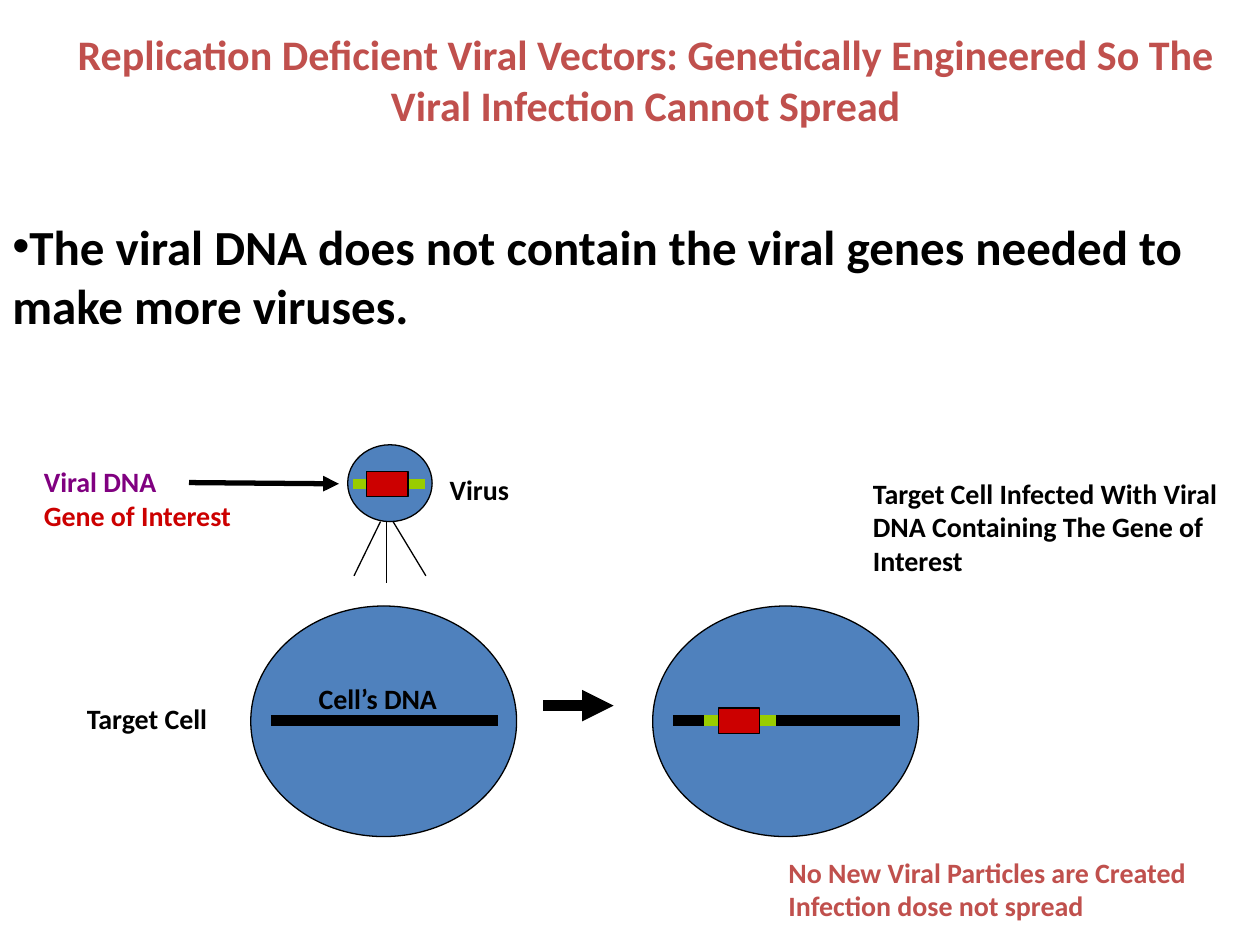
from lxml.etree import SubElement
from pptx import Presentation
from pptx.dml.color import RGBColor
from pptx.enum.shapes import MSO_CONNECTOR, MSO_SHAPE
from pptx.enum.text import MSO_AUTO_SIZE, PP_ALIGN
from pptx.oxml.ns import qn
from pptx.util import Inches, Pt

BLACK = "000000"
BLUE = "4F81BD"
BRICK = "C0504D"
RED = "CC0000"
GREEN = "99CC00"
PURPLE = "800080"


def colour(value):
    return RGBColor.from_string(value)


class SlideBuilder:
    font_name = "Calibri"
    label_size = 16
    outline_width = 0.75
    strand_width = 6

    def __init__(self, page):
        self.page = page

    def text(self, left, top, width, height, lines, size=label_size,
             align=PP_ALIGN.LEFT, wrap=False, bullet=None):
        box = self.page.shapes.add_textbox(
            Inches(left), Inches(top), Inches(width), Inches(height))
        frame = box.text_frame
        frame.word_wrap = wrap
        frame.auto_size = MSO_AUTO_SIZE.SHAPE_TO_FIT_TEXT
        for index, (words, ink) in enumerate(lines):
            para = frame.add_paragraph() if index else frame.paragraphs[0]
            para.text = words
            para.alignment = align
            if bullet:
                properties = para._p.get_or_add_pPr()
                SubElement(properties, qn("a:buFont"), typeface="Arial")
                SubElement(properties, qn("a:buChar"), char=bullet)
            para.font.name = self.font_name
            para.font.size = Pt(size)
            para.font.bold = True
            para.font.color.rgb = colour(ink)

    def shape(self, kind, left, top, width, height, fill):
        shape = self.page.shapes.add_shape(
            kind, Inches(left), Inches(top), Inches(width), Inches(height))
        shape.shadow.inherit = False
        shape.fill.solid()
        shape.fill.fore_color.rgb = colour(fill)
        shape.line.color.rgb = colour(BLACK)
        shape.line.width = Pt(self.outline_width)

    def line(self, start, end, ink=BLACK, width=outline_width, arrow=False):
        line = self.page.shapes.add_connector(
            MSO_CONNECTOR.STRAIGHT, *(Inches(value) for value in start + end))
        line.line.color.rgb = colour(ink)
        line.line.width = Pt(width)
        if arrow:
            SubElement(line.line._get_or_add_ln(), qn("a:tailEnd"), type="triangle")
        SubElement(line._element.spPr, qn("a:effectLst"))

    def strand(self, left, y, length, ink=BLACK, arrow=False):
        self.line((left, y), (left + length, y), ink, self.strand_width, arrow)

    def cell(self, left):
        self.shape(MSO_SHAPE.OVAL, left, 4.81, 2.11, 1.83, BLUE)
        self.strand(left + 0.16, 5.72, 1.8)

    def viral_dna(self, left, y):
        self.strand(left, y, 0.57, GREEN)
        self.shape(MSO_SHAPE.RECTANGLE, left + 0.11, y - 0.1, 0.33, 0.2, RED)


def main():
    deck = Presentation()
    deck.slide_width = Inches(10)
    deck.slide_height = Inches(7.5)
    builder = SlideBuilder(deck.slides.add_slide(deck.slide_layouts[6]))

    builder.text(0.5, 0.18, 9.25, 0.9, [(
        "Replication Deficient Viral Vectors: Genetically Engineered So The "
        "Viral Infection Cannot Spread", BRICK)],
        size=24, align=PP_ALIGN.CENTER, wrap=True)
    builder.text(0, 1.67, 10, 1.04, [(
        "The viral DNA does not contain the viral genes needed to make more "
        "viruses.", BLACK)], size=28, wrap=True, bullet="•")

    builder.shape(MSO_SHAPE.OVAL, 2.76, 3.53, 0.67, 0.61, BLUE)
    for top_x, foot_x, foot_y in [(3.02, 2.81, 4.57), (3.07, 3.07, 4.63),
                                  (3.12, 3.38, 4.57)]:
        builder.line((top_x, 4.14), (foot_x, foot_y))
    builder.viral_dna(2.8, 3.84)
    builder.line((1.5, 3.83), (2.69, 3.84), width=3, arrow=True)

    for left in (1.99, 5.18):
        builder.cell(left)
    builder.viral_dna(5.59, 5.72)
    builder.strand(4.31, 5.6, 0.56, arrow=True)

    builder.text(3.47, 3.7, 0.76, 0.44, [("Virus", BLACK)])
    builder.text(0.59, 5.52, 1.35, 0.44, [("Target Cell", BLACK)])
    builder.text(2.43, 5.36, 1.34, 0.44, [("Cell’s DNA", BLACK)])
    builder.text(0.25, 3.64, 1.9, 0.76,
                 [("Viral DNA", PURPLE), ("Gene of Interest", RED)])
    builder.text(6.83, 3.73, 3.17, 1.09, [(
        "Target Cell Infected With Viral DNA Containing The Gene of Interest",
        BLACK)], wrap=True)
    builder.text(6.16, 6.74, 3.84, 0.76, [
        ("No New Viral Particles are Created", BRICK),
        ("Infection dose not spread", BRICK)])

    deck.save("out.pptx")


if __name__ == "__main__":
    main()
